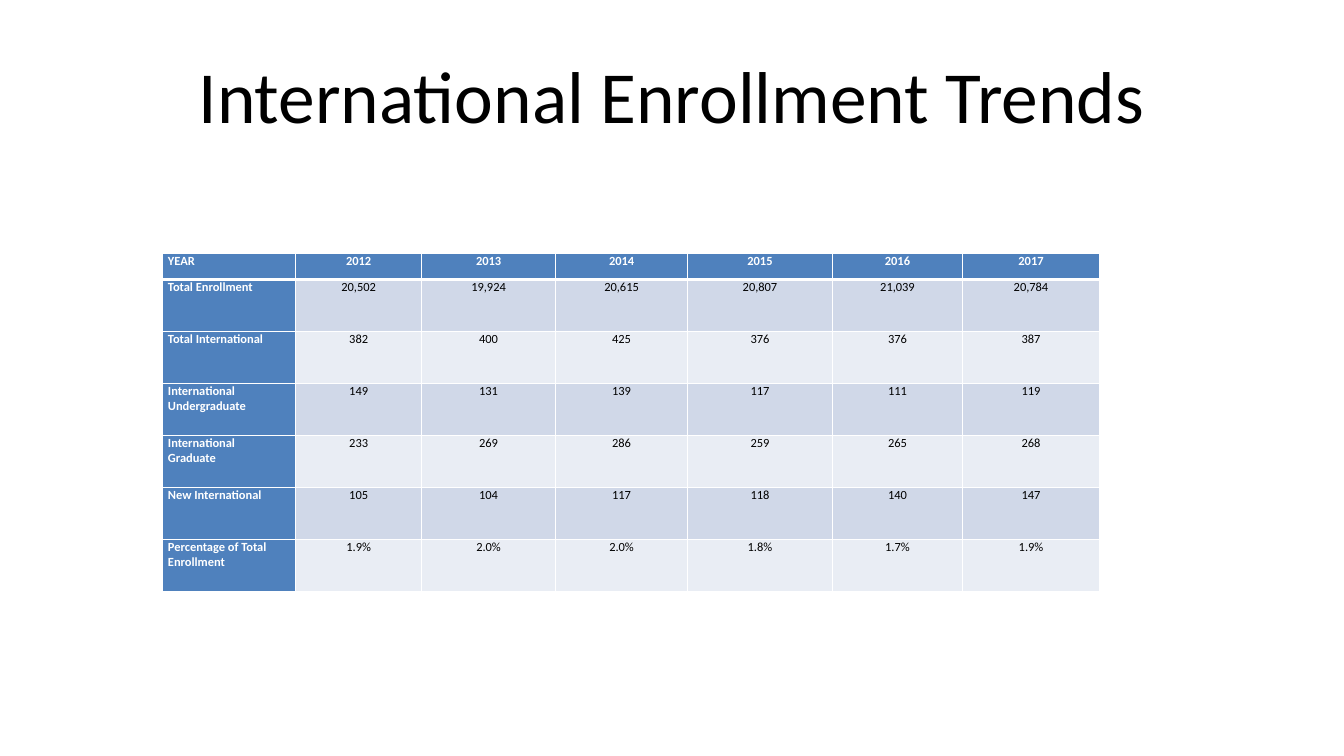
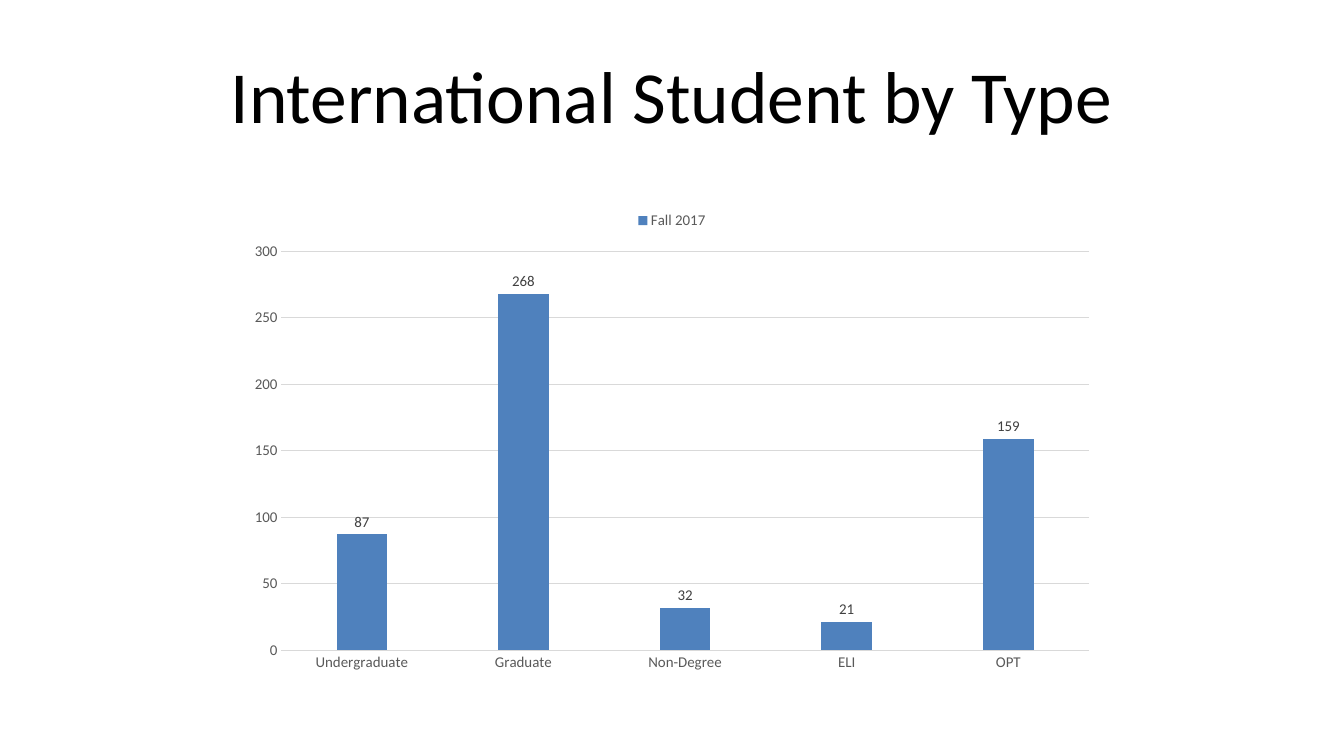
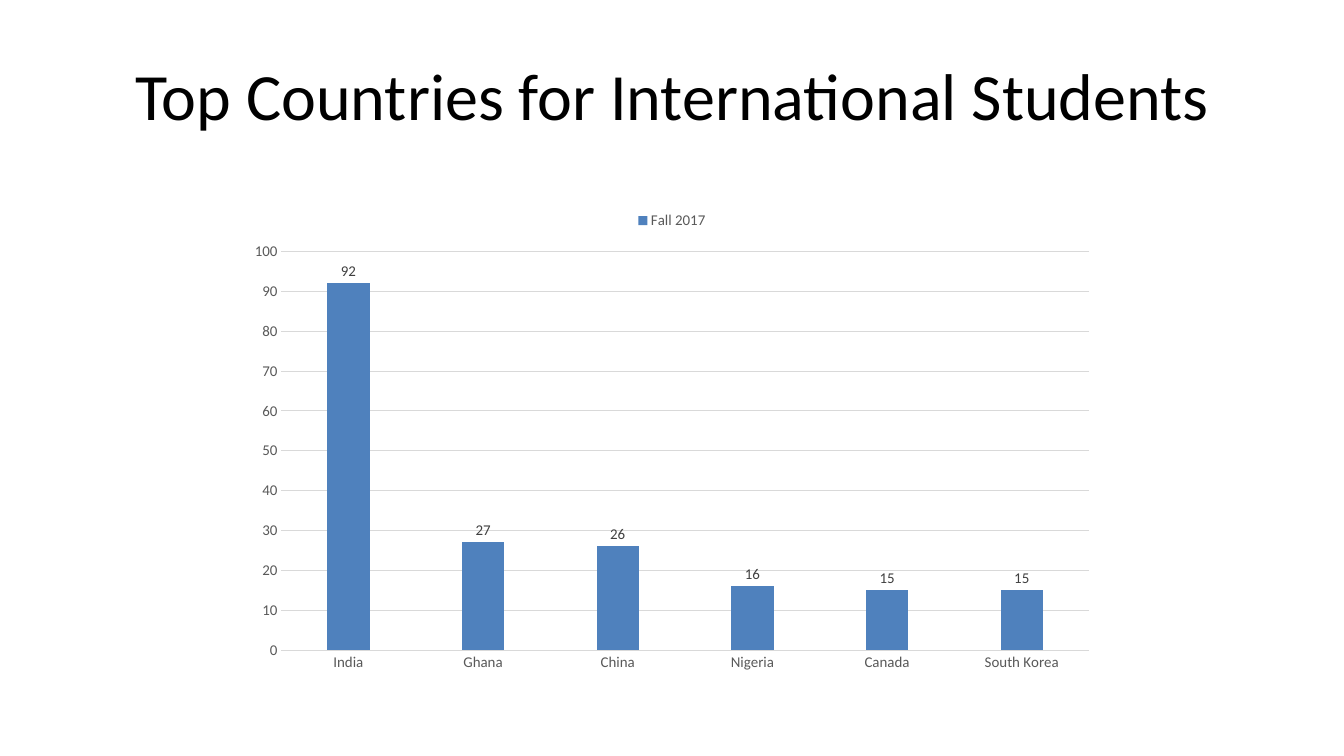
from lxml import etree
from pptx import Presentation
from pptx.chart.data import CategoryChartData
from pptx.dml.color import RGBColor
from pptx.enum import chart as ch, text as t
from pptx.oxml import ns
from pptx.util import Pt

FONT = "Calibri"
COLORS = {
    "blue": "4F81BD", "band": "D0D8E8", "pale": "E9EDF4", "white": "FFFFFF",
    "black": "000000", "axis": "595959", "label": "404040", "grid": "D9D9D9",
}


def rgb(name):
    return RGBColor.from_string(COLORS[name])


def set_font(font, size, color, bold=False):
    font.name, font.size, font.bold = FONT, Pt(size), bold
    font.color.rgb = rgb(color)


def write(tf, text, *, size, color="black", bold=False, align=t.PP_ALIGN.CENTER,
          anchor=t.MSO_ANCHOR.TOP):
    """Fill a text frame, one paragraph for each line of text."""
    tf.word_wrap = True
    tf.vertical_anchor = anchor
    for i, line in enumerate(text.split("\n")):
        p = tf.paragraphs[0] if i == 0 else tf.add_paragraph()
        p.alignment = align
        r = p.add_run()
        r.text = line
        set_font(r.font, size, color, bold)


def set_borders(cell, **widths):
    """Draw white cell borders; widths in points are keyed by L, R, T, B."""
    tcPr = cell._tc.get_or_add_tcPr()
    for i, (side, width) in enumerate(widths.items()):
        ln = etree.Element(ns.qn(f"a:ln{side}"), w=str(int(Pt(width))))
        fill = etree.SubElement(ln, ns.qn("a:solidFill"))
        etree.SubElement(fill, ns.qn("a:srgbClr"), val=COLORS["white"])
        tcPr.insert(i, ln)


class Deck:
    def __init__(self):
        self.prs = Presentation()
        self.prs.slide_width, self.prs.slide_height = Pt(1080), Pt(607.5)
        self.s = None

    def slide(self, title, size=59):
        self.s = self.prs.slides.add_slide(self.prs.slide_layouts[5])
        sp = self.s.shapes.title
        sp.left, sp.top, sp.width, sp.height = Pt(54), Pt(24.5), Pt(972), Pt(101.5)
        tf = sp.text_frame
        tf.auto_size = t.MSO_AUTO_SIZE.NONE
        tf.margin_left = tf.margin_right = Pt(9.4)
        tf.margin_top = tf.margin_bottom = Pt(4.7)
        write(tf, title, size=size, anchor=t.MSO_ANCHOR.MIDDLE)

    def table(self, rows, widths, x, y, header_height, row_height):
        height = header_height + row_height * (len(rows) - 1)
        frame = self.s.shapes.add_table(len(rows), len(widths), Pt(x), Pt(y),
                                        Pt(sum(widths)), Pt(height))
        table = frame.table
        for column, width in zip(table.columns, widths):
            column.width = Pt(width)
        for i, row in enumerate(rows):
            table.rows[i].height = Pt(row_height if i else header_height)
            for j, value in enumerate(row):
                self.cell(table.cell(i, j), value, i, j)

    def cell(self, cell, value, row, col):
        heading = row == 0 or col == 0
        cell.margin_left = cell.margin_right = Pt(4.5)
        cell.margin_top = cell.margin_bottom = 0
        cell.fill.solid()
        cell.fill.fore_color.rgb = rgb("blue" if heading else "band" if row % 2 else "pale")
        set_borders(cell, L=1, R=1, T=3 if row == 1 else 1, B=3 if row == 0 else 1)
        write(cell.text_frame, value, size=10, bold=heading,
              color="white" if heading else "black",
              align=t.PP_ALIGN.CENTER if col else t.PP_ALIGN.LEFT)

    def column_chart(self, name, values):
        data = CategoryChartData()
        data.categories = list(values)
        data.add_series(name, values.values())
        chart = self.s.shapes.add_chart(ch.XL_CHART_TYPE.COLUMN_CLUSTERED, Pt(190.8), Pt(162),
                                        Pt(698.4), Pt(385.2), data).chart
        set_font(chart.font, 10, "black")
        chart.has_title = False
        chart.has_legend = True
        chart.legend.position = ch.XL_LEGEND_POSITION.TOP
        chart.legend.include_in_layout = False
        set_font(chart.legend.font, 12, "axis")

        for axis in (chart.category_axis, chart.value_axis):
            axis.major_tick_mark = axis.minor_tick_mark = ch.XL_TICK_MARK.NONE
            set_font(axis.tick_labels.font, 12, "axis")
        chart.value_axis.has_major_gridlines = True
        chart.value_axis.format.line.fill.background()
        for part in (chart.category_axis, chart.value_axis.major_gridlines):
            part.format.line.width = Pt(0.75)
            part.format.line.color.rgb = rgb("grid")

        plot = chart.plots[0]
        plot.gap_width, plot.overlap, plot.vary_by_categories = 219, -27, False
        series = plot.series[0]
        series.format.fill.solid()
        series.format.fill.fore_color.rgb = rgb("blue")
        labels = series.data_labels
        labels.show_value = True
        labels.position = ch.XL_LABEL_POSITION.OUTSIDE_END
        set_font(labels.font, 12, "label")


ENROLLMENT = [
    ["YEAR", "2012", "2013", "2014", "2015", "2016", "2017"],
    ["Total Enrollment", "20,502", "19,924", "20,615", "20,807", "21,039", "20,784"],
    ["Total International", "382", "400", "425", "376", "376", "387"],
    ["International\nUndergraduate", "149", "131", "139", "117", "111", "119"],
    ["International\nGraduate", "233", "269", "286", "259", "265", "268"],
    ["New International", "105", "104", "117", "118", "140", "147"],
    ["Percentage of Total Enrollment", "1.9%", "2.0%", "2.0%", "1.8%", "1.7%", "1.9%"],
]
STUDENT_TYPES = {"Undergraduate": 87, "Graduate": 268, "Non-Degree": 32, "ELI": 21, "OPT": 159}
COUNTRIES = {"India": 92, "Ghana": 27, "China": 26, "Nigeria": 16, "Canada": 15,
             "South Korea": 15}


def main():
    deck = Deck()

    deck.slide("International Enrollment Trends")
    deck.table(ENROLLMENT, [107.3, 100.8, 108, 105.8, 116.6, 104.4, 110.2],
               x=130.5, y=203.8, header_height=20.9, row_height=41.75)

    deck.slide("International Student by Type")
    deck.column_chart("Fall 2017", STUDENT_TYPES)

    deck.slide("Top Countries for International Students", size=53.1)
    deck.column_chart("Fall 2017", COUNTRIES)

    deck.prs.save("out.pptx")


if __name__ == "__main__":
    main()
